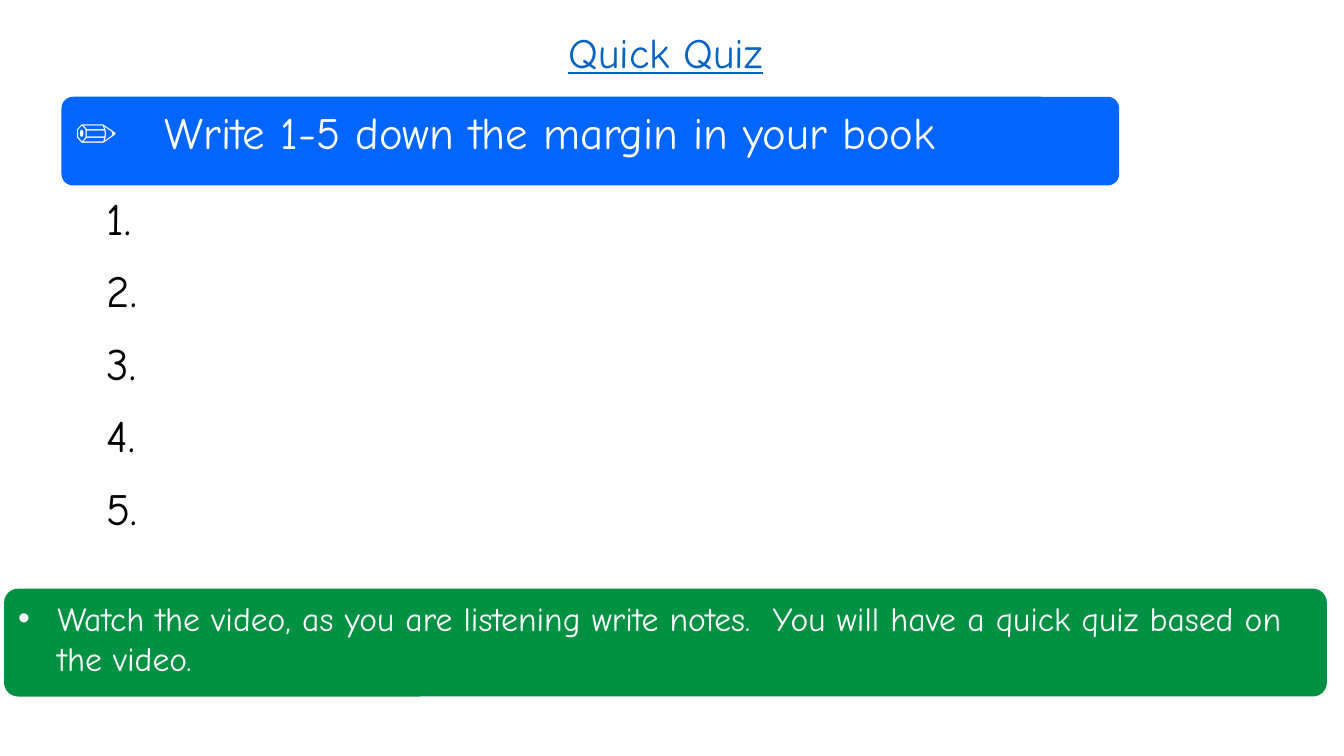
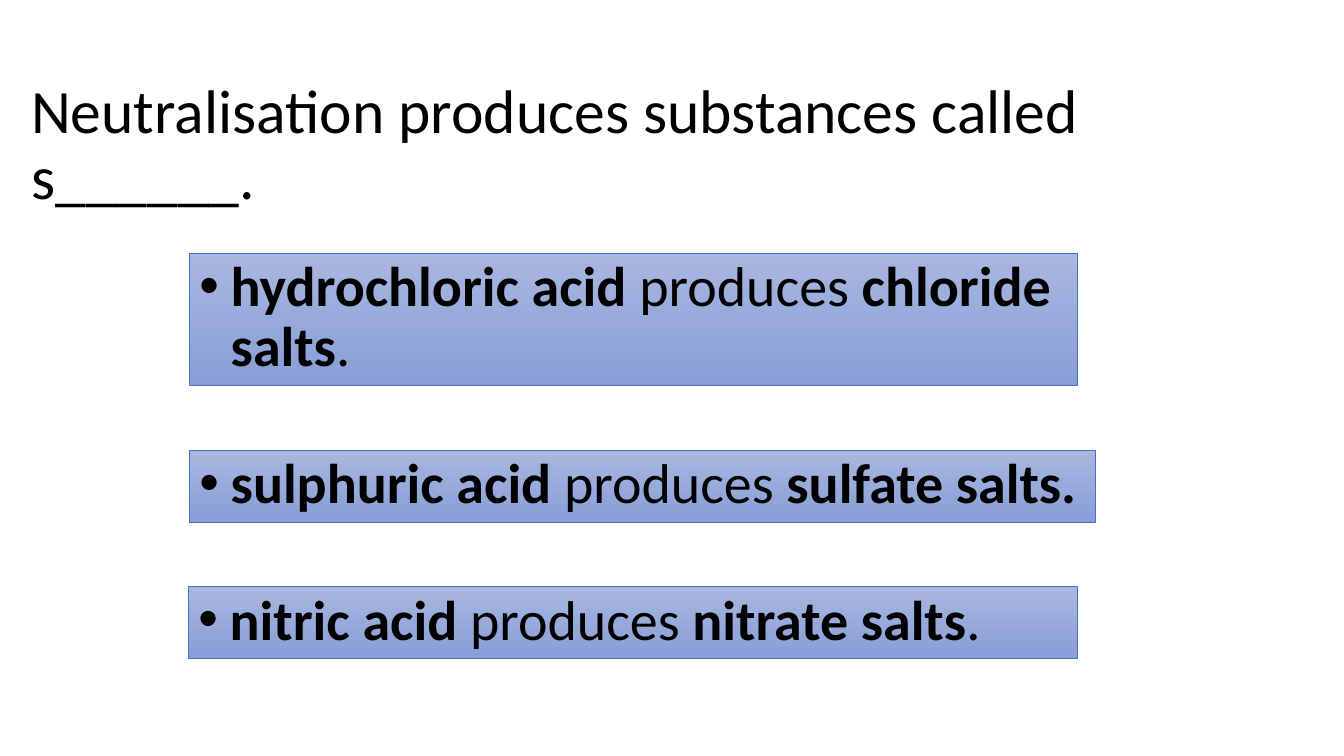
"""Build a two-slide chemistry lesson: a quick quiz and the salts made by neutralisation."""
from lxml import etree
from pptx import Presentation
from pptx import util as u
from pptx.dml.color import RGBColor
from pptx.enum import shapes, text
from pptx.oxml.ns import qn

PX = u.Inches(1) // 100
COLORS = {
    "black": "000000", "white": "FFFFFF", "link": "0563C1",
    "blue": "0066FF", "green": "009242",
    "grad_top": "A8B7DF", "grad_bottom": "889ED7", "outline": "4472C4",
}
RGB = {name: RGBColor.from_string(value) for name, value in COLORS.items()}
COMIC, CALIBRI = "Comic Neue", "Calibri"


def write(s, content, size, color, font, align=text.PP_ALIGN.LEFT,
          anchor=text.MSO_ANCHOR.TOP, spacing=1.0):
    """Fill a shape with one paragraph and return that paragraph."""
    tf = s.text_frame
    tf.word_wrap = True
    tf.auto_size = text.MSO_AUTO_SIZE.NONE
    tf.vertical_anchor = anchor
    p = tf.paragraphs[0]
    for part in content:
        p.add_run().text = part
    p.alignment, p.line_spacing = align, spacing
    p.font.size, p.font.name = u.Pt(size), font
    p.font.color.rgb = RGB[color]
    return p


def hang(p, indent, bullet=None):
    """Give a paragraph a hanging indent and, if wanted, a bullet."""
    pPr = p._p.get_or_add_pPr()
    pPr.set("marL", str(indent * PX))
    pPr.set("indent", str(-indent * PX))
    if bullet:
        char = etree.Element(qn("a:buChar"), char=bullet)
        pPr.find(qn("a:defRPr")).addprevious(char)
        char.addprevious(etree.Element(qn("a:buFont"), typeface="Arial"))


prs = Presentation()
prs.slide_width, prs.slide_height = 1333 * PX, 750 * PX
title_only = prs.slide_layouts[5]

quiz = prs.slides.add_slide(title_only)
title = quiz.shapes.title
title.left, title.top, title.width, title.height = 210 * PX, 21 * PX, 900 * PX, 87 * PX
p = write(title, ["Quick Quiz"], 30, "link", COMIC, text.PP_ALIGN.CENTER)
p.font.underline = True

bands = [
    (61, 96, 1049, 88, "blue", 32, None,
     ["✏\t", "Write 1-5 down the margin in your book"]),
    (4, 584, 1312, 107, "green", 24, "•",
     ["Watch the video, as you are listening write notes.  "
      "You will have a quick quiz based on the video."]),
]
for x, y, w, h, fill, size, bullet, content in bands:
    s = quiz.shapes.add_shape(shapes.MSO_SHAPE.ROUNDED_RECTANGLE,
                              x * PX, y * PX, w * PX, h * PX)
    s.adjustments[0] = 0.13
    s.shadow.inherit = False
    s.fill.solid()
    s.fill.fore_color.rgb = RGB[fill]
    s.line.fill.background()
    p = write(s, content, size, "white", COMIC)
    hang(p, 39, bullet)
    if len(p.runs) > 1:
        p.runs[0].font.name = CALIBRI

for i in range(5):
    s = quiz.shapes.add_textbox(96 * PX, (184 + 72 * i) * PX, 63 * PX, 64 * PX)
    write(s, [f"{i + 1}."], 32, "black", COMIC)

salts = prs.slides.add_slide(title_only)
title = salts.shapes.title
title.left, title.top, title.width, title.height = 21 * PX, 73 * PX, 1295 * PX, 145 * PX
write(title, ["Neutralisation produces substances called s______."], 44, "black", CALIBRI,
      anchor=text.MSO_ANCHOR.MIDDLE, spacing=0.9)
title.text_frame.margin_right = 50 * PX

reactions = [
    (188, 251, 881, 131, ["hydrochloric acid ", "produces ", "chloride salts", "."]),
    (188, 447, 898, 71, ["sulphuric acid ", "produces ", "sulfate salts."]),
    (187, 582, 882, 71, ["nitric acid ", "produces ", "nitrate salts", "."]),
]
for x, y, w, h, content in reactions:
    s = salts.shapes.add_shape(shapes.MSO_SHAPE.RECTANGLE, x * PX, y * PX, w * PX, h * PX)
    s.shadow.inherit = False
    s.fill.gradient()
    s.fill.gradient_angle = 270
    for stop, color in zip(s.fill.gradient_stops, ["grad_top", "grad_bottom"]):
        stop.color.rgb = RGB[color]
    s.line.color.rgb = RGB["outline"]
    s.line.width = u.Pt(0.5)
    p = write(s, content, 40, "black", CALIBRI, spacing=0.9)
    hang(p, 31, "•")
    for i, r in enumerate(p.runs):
        r.font.bold = i % 2 == 0

prs.save("out.pptx")
